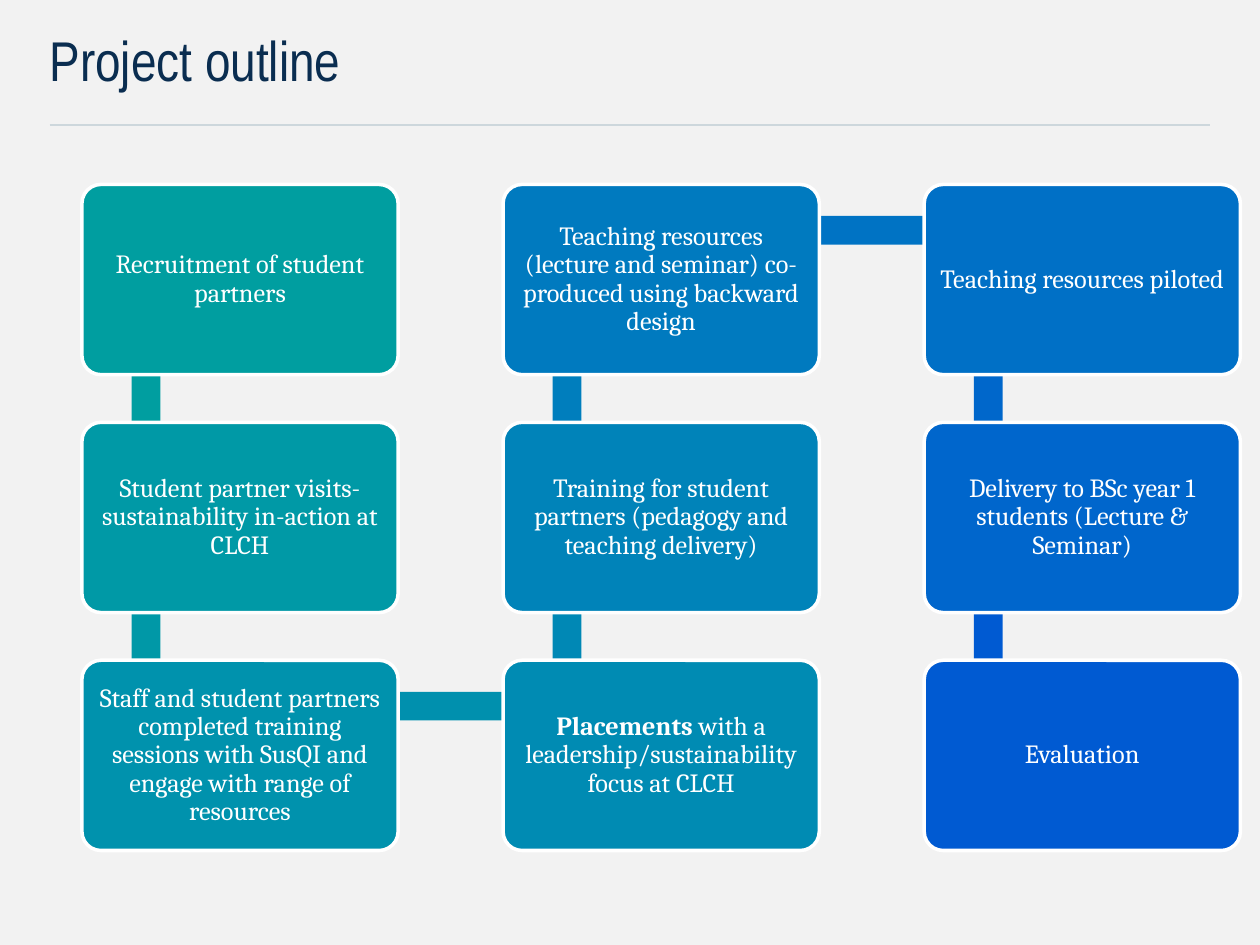
import pptx
import pptx.dml.color
import pptx.enum.shapes
import pptx.enum.text
import pptx.oxml.ns
import pptx.util
from lxml import etree

Pt = pptx.util.Pt
RGB = pptx.dml.color.RGBColor
SHAPE = pptx.enum.shapes.MSO_SHAPE
ALIGN = pptx.enum.text.PP_ALIGN
ANCHOR = pptx.enum.text.MSO_ANCHOR

BACKGROUND = RGB(0xF2, 0xF2, 0xF2)
NAVY = RGB(0x0A, 0x2D, 0x50)
RULE = RGB(0xCD, 0xD7, 0xDC)
WHITE = RGB(0xFF, 0xFF, 0xFF)

CARD_W, CARD_H = 180.7, 108.7
BAR = 16.4  # thickness of the bars between cards

# Steps in order: (column, row), card colour, colour of the bar to the next step, runs (text, bold)
STEPS = [
    ((0, 0), RGB(0x00, 0x9E, 0xA0), RGB(0x00, 0x9E, 0xA0),
     [("Recruitment of student partners", False)]),
    ((0, 1), RGB(0x00, 0x99, 0xA6), RGB(0x00, 0x98, 0xA7),
     [("Student partner visits- sustainability in-action at CLCH", False)]),
    ((0, 2), RGB(0x00, 0x92, 0xAD), RGB(0x00, 0x90, 0xAE),
     [("Staff and student partners completed training sessions with SusQI "
       "and engage with range of resources", False)]),
    ((1, 2), RGB(0x00, 0x8B, 0xB3), RGB(0x00, 0x88, 0xB5),
     [("Placements ", True), ("with a leadership/sustainability focus at CLCH", False)]),
    ((1, 1), RGB(0x00, 0x83, 0xB9), RGB(0x00, 0x7E, 0xBD),
     [("Training for student partners (pedagogy and teaching delivery)", False)]),
    ((1, 0), RGB(0x00, 0x7A, 0xBF), RGB(0x00, 0x73, 0xC4),
     [("Teaching resources (lecture and seminar) co-produced using backward design", False)]),
    ((2, 0), RGB(0x00, 0x70, 0xC6), RGB(0x00, 0x67, 0xCB),
     [("Teaching resources piloted", False)]),
    ((2, 1), RGB(0x00, 0x66, 0xCC), RGB(0x00, 0x5A, 0xD2),
     [("Delivery to BSc year 1 students (Lecture & Seminar)", False)]),
    ((2, 2), RGB(0x00, 0x5A, 0xD2), None, [("Evaluation", False)]),
]


def set_margins(tf, margin):
    tf.margin_left = tf.margin_right = tf.margin_top = tf.margin_bottom = Pt(margin)


def add_header(s, x, y, w, h):
    """Title with a thin rule along the bottom of its box."""
    title = s.shapes.title
    title.left, title.top, title.width, title.height = Pt(x), Pt(y), Pt(w), Pt(h)
    tf = title.text_frame
    tf.text = "Project outline"
    set_margins(tf, 0)
    tf.vertical_anchor = ANCHOR.TOP
    p = tf.paragraphs[0]
    p.alignment = ALIGN.LEFT
    font = p.runs[0].font
    font.name, font.size = "Arial Narrow", Pt(32)
    font.color.rgb = NAVY

    rule = s.shapes.add_connector(pptx.enum.shapes.MSO_CONNECTOR.STRAIGHT,
                                  Pt(x), Pt(y + h), Pt(x + w), Pt(y + h))
    rule.line.color.rgb = RULE
    rule.line.width = Pt(1)
    etree.SubElement(rule._element.spPr, pptx.oxml.ns.qn("a:effectLst"))


def add_block(s, kind, x, y, w, h, fill):
    sp = s.shapes.add_shape(kind, Pt(x), Pt(y), Pt(w), Pt(h))
    sp.shadow.inherit = False
    sp.fill.solid()
    sp.fill.fore_color.rgb = fill
    sp.line.fill.background()
    return sp


def add_card(s, x, y, fill, runs):
    sp = add_block(s, SHAPE.ROUNDED_RECTANGLE, x, y, CARD_W, CARD_H, fill)
    sp.adjustments[0] = 0.1
    sp.line.color.rgb = WHITE
    sp.line.width = Pt(2)
    tf = sp.text_frame
    tf.word_wrap = True
    tf.vertical_anchor = ANCHOR.MIDDLE
    set_margins(tf, 4.3)
    p = tf.paragraphs[0]
    p.alignment = ALIGN.CENTER
    p.line_spacing = 0.9
    for text, bold in runs:
        r = p.add_run()
        r.text = text
        r.font.name, r.font.size, r.font.bold = "Cambria", Pt(15), bold
        r.font.color.rgb = WHITE


def add_process(s, x, y, w, h):
    """Snaking process: three columns of three cards joined by bars."""
    pitch_x, pitch_y = (w - CARD_W) / 2, (h - CARD_H) / 2
    places = [(x + col * pitch_x, y + row * pitch_y) for (col, row), *_ in STEPS]
    for i, (_, fill, bar_fill, runs) in enumerate(STEPS):
        left, top = places[i]
        # The bar goes first so that both cards cover its ends
        if bar_fill is not None:
            next_left, next_top = places[i + 1]
            if next_left > left:
                box = (left + 36.7, top + 18, pitch_x, BAR)
            else:
                box = (left + 28.4, min(top, next_top) + 27, BAR, pitch_y)
            add_block(s, SHAPE.RECTANGLE, *box, bar_fill)
        add_card(s, left, top, fill, runs)


def main():
    prs = pptx.Presentation()
    prs.slide_width, prs.slide_height = Pt(720), Pt(540)
    s = prs.slides.add_slide(prs.slide_layouts[5])
    s.background.fill.solid()
    s.background.fill.fore_color.rgb = BACKGROUND
    add_header(s, 28.3, 14.4, 663.4, 57)
    add_process(s, 46.8, 105.4, 662, 380.6)
    prs.save("out.pptx")


if __name__ == "__main__":
    main()
